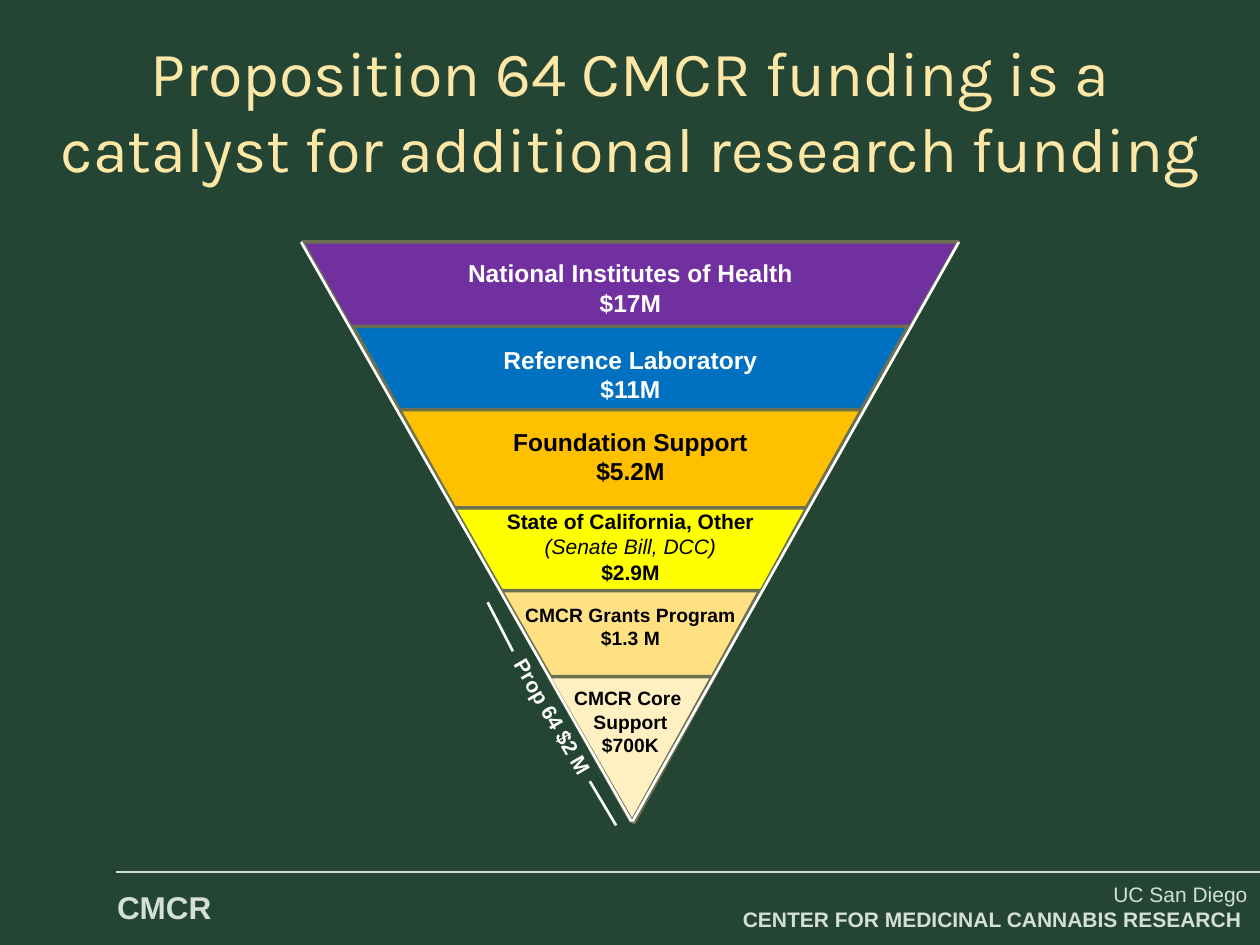
from dataclasses import dataclass
from typing import NamedTuple

from lxml import etree
from pptx import Presentation
from pptx.dml.color import RGBColor
from pptx.enum import shapes, text
from pptx.oxml import ns
from pptx.slide import Slide
from pptx.util import Cm, Pt


@dataclass(frozen=True)
class Theme:
    background: str = "254534"
    footer: str = "D4DFD7"
    title: str = "FCE7A7"
    outline: str = "6B7050"
    white: str = "FFFFFF"
    black: str = "000000"
    body_font: str = "Arial"
    title_font: str = "Karla"
    title_size: int = 36
    brand_size: int = 18
    large: int = 14
    medium: int = 12
    small: int = 11


THEME = Theme()
AXIS = 12.71  # horizontal centre of the funnel, cm


class Box(NamedTuple):
    left: float
    top: float
    width: float
    height: float


class Span(NamedTuple):
    words: str
    bold: bool = True
    italic: bool = False


class Style(NamedTuple):
    size: int
    color: str
    align: text.PP_ALIGN = text.PP_ALIGN.CENTER
    font: str = THEME.body_font


class Tier(NamedTuple):
    """One funnel level: an inverted triangle and its label."""
    top: float
    width: float
    height: float
    apex: float
    fill: str
    label_top: float
    label_width: float
    label_height: float
    style: Style
    lines: tuple[Span, ...]


class Rule(NamedTuple):
    x1: float
    y1: float
    x2: float
    y2: float


LIGHT = Style(THEME.large, THEME.white)
DARK = Style(THEME.large, THEME.black)
MEDIUM = Style(THEME.medium, THEME.black)
SMALL = Style(THEME.small, THEME.black)

TIERS = (
    Tier(4.88, 13.23, 11.63, 0.5, "7030A0", 5.08, 7.09, 1.45, LIGHT,
         (Span("National Institutes of Health"), Span("$17M"))),
    Tier(6.58, 11.2, 9.96, 0.5, "0070C0", 6.83, 5.64, 1.45, LIGHT,
         (Span("Reference Laboratory"), Span("$11M"))),
    Tier(8.26, 9.32, 8.28, 0.5, "FFC000", 8.48, 5.26, 1.45, DARK,
         (Span("Foundation Support"), Span("$5.2M"))),
    Tier(10.24, 7.11, 6.35, 0.51, "FFFF00", 10.13, 5.92, 1.8, MEDIUM,
         (Span("State of California, Other"),
          Span("(Senate Bill, DCC)", bold=False, italic=True), Span("$2.9M"))),
    Tier(11.91, 5.21, 4.65, 0.51, "FFE183", 12.04, 4.78, 1.19, SMALL,
         (Span("CMCR Grants Program"), Span("$1.3 M"))),
    Tier(13.64, 3.3, 2.92, 0.51, "FFF0C1", 13.72, 2.79, 1.68, SMALL,
         (Span("CMCR Core "), Span("Support"), Span("$700K"))),
)

FUNNEL_EDGES = (Rule(6.07, 4.88, 12.73, 16.56), Rule(19.33, 4.88, 12.75, 16.56))
BRACKET = (Rule(11.89, 15.75, 12.42, 16.64), Rule(9.83, 12.14, 10.34, 13.13))


def rgb(color: str) -> RGBColor:
    return RGBColor.from_string(color)


def add_text(page: Slide, box: Box, style: Style, lines: tuple[Span, ...],
             wrap: bool = True, rotation: float = 0,
             anchor: text.MSO_ANCHOR = text.MSO_ANCHOR.TOP) -> None:
    """Add a text box with one paragraph per span."""
    label = page.shapes.add_textbox(*map(Cm, box))
    label.rotation = rotation
    frame = label.text_frame
    frame.word_wrap = wrap
    frame.auto_size = text.MSO_AUTO_SIZE.SHAPE_TO_FIT_TEXT
    frame.vertical_anchor = anchor
    for index, span in enumerate(lines):
        para = frame.add_paragraph() if index else frame.paragraphs[0]
        para.alignment = style.align
        run = para.add_run()
        run.text = span.words
        run.font.name = style.font
        run.font.size = Pt(style.size)
        run.font.bold = span.bold
        run.font.italic = span.italic
        run.font.color.rgb = rgb(style.color)


def add_rule(page: Slide, rule: Rule, color: str, weight: float) -> None:
    line = page.shapes.add_connector(shapes.MSO_CONNECTOR.STRAIGHT, *map(Cm, rule))
    line.line.color.rgb = rgb(color)
    line.line.width = Pt(weight)
    etree.SubElement(line._element.spPr, ns.qn("a:effectLst"))


def add_triangle(page: Slide, tier: Tier) -> None:
    triangle = page.shapes.add_shape(
        shapes.MSO_SHAPE.ISOSCELES_TRIANGLE, Cm(AXIS - tier.width / 2),
        Cm(tier.top), Cm(tier.width), Cm(tier.height))
    triangle.adjustments[0] = tier.apex
    triangle._element.spPr.find(ns.qn("a:xfrm")).set("flipV", "1")
    triangle.shadow.inherit = False
    triangle.fill.solid()
    triangle.fill.fore_color.rgb = rgb(tier.fill)
    triangle.line.color.rgb = rgb(THEME.outline)
    triangle.line.width = Pt(2)


def add_tier_label(page: Slide, tier: Tier) -> None:
    box = Box(AXIS - tier.label_width / 2, tier.label_top,
              tier.label_width, tier.label_height)
    add_text(page, box, tier.style, tier.lines)


def add_footer(page: Slide) -> None:
    left, right = text.PP_ALIGN.LEFT, text.PP_ALIGN.RIGHT
    add_text(page, Box(2.11, 17.78, 2.51, 1.02),
             Style(THEME.brand_size, THEME.footer, left), (Span("CMCR"),), wrap=False)
    add_rule(page, Rule(2.34, 17.58, 25.4, 17.58), THEME.footer, 1)
    add_text(page, Box(7.82, 17.65, 17.58, 1.27),
             Style(THEME.medium, THEME.footer, right),
             (Span("UC San Diego", bold=False),
              Span("CENTER FOR MEDICINAL CANNABIS RESEARCH ")),
             anchor=text.MSO_ANCHOR.MIDDLE)


def add_funnel(page: Slide) -> None:
    for tier in TIERS:
        add_triangle(page, tier)
    for tier in TIERS:
        add_tier_label(page, tier)
    for rule in FUNNEL_EDGES + BRACKET:
        add_rule(page, rule, THEME.white, 1.5)
    add_text(page, Box(9.19, 14.07, 3.91, 0.76), Style(THEME.medium, THEME.white),
             (Span("Prop 64 $2 M"),), rotation=59.9)


def main() -> None:
    deck = Presentation()
    deck.slide_width, deck.slide_height = Cm(25.4), Cm(19.05)
    page = deck.slides.add_slide(deck.slide_layouts[6])
    page.background.fill.solid()
    page.background.fill.fore_color.rgb = rgb(THEME.background)
    add_footer(page)
    add_funnel(page)
    add_text(page, Box(0.43, 0.56, 24.56, 3.33),
             Style(THEME.title_size, THEME.title, font=THEME.title_font),
             (Span("Proposition 64 CMCR funding is a catalyst for "
                   "additional research funding", bold=False),))
    deck.save("out.pptx")


if __name__ == "__main__":
    main()
